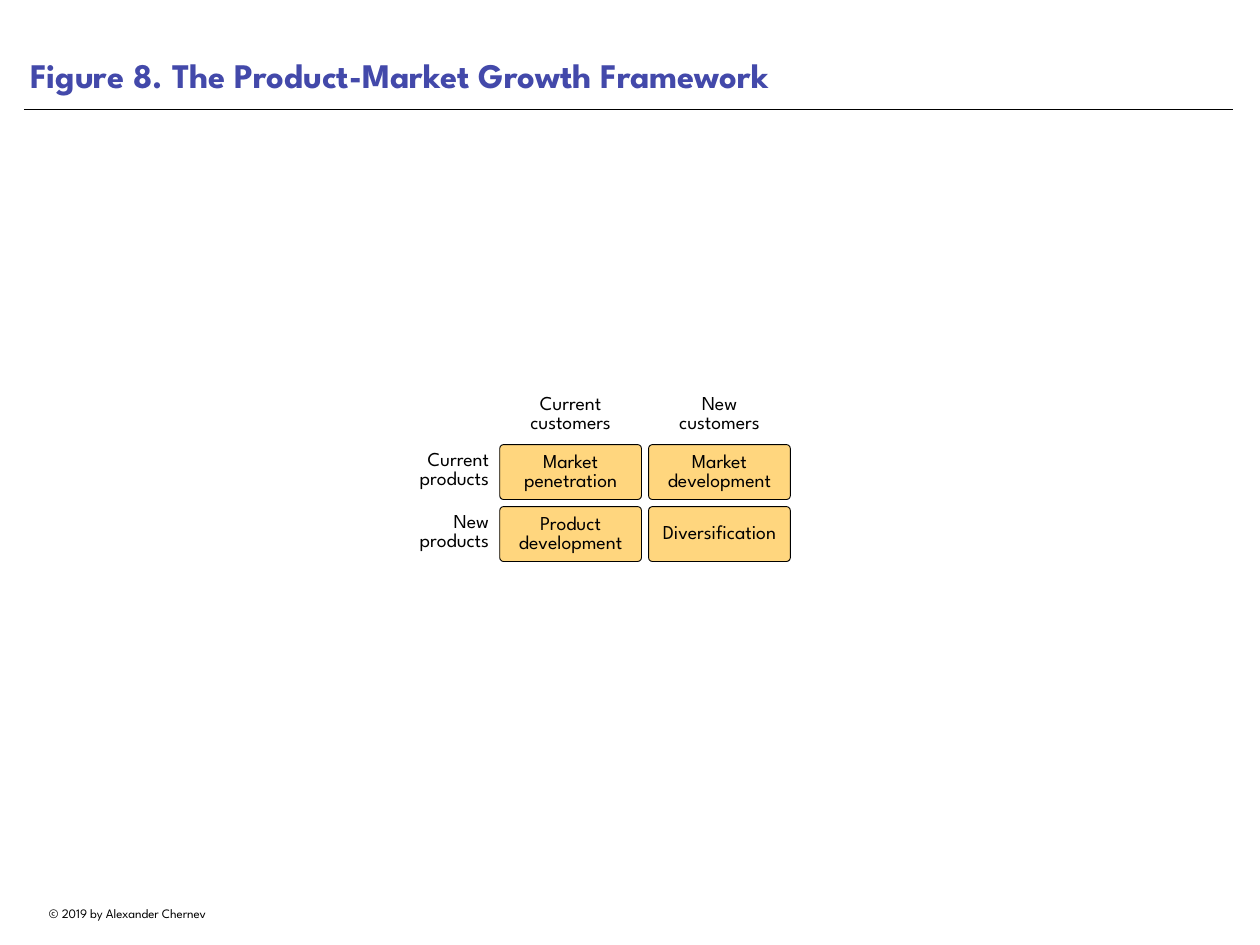
from pptx import Presentation
from pptx.dml.color import RGBColor
from pptx.enum.shapes import MSO_CONNECTOR, MSO_SHAPE
from pptx.enum.text import MSO_ANCHOR as ANCHOR, PP_ALIGN as ALIGN
from pptx.util import Inches, Pt
from lxml.etree import SubElement
from pptx.oxml.ns import qn

FONT = "League Spartan"
BLACK, INDIGO, AMBER = "000000", "4349AA", "FFD67E"
CUSTOMERS = ["Current customers", "New customers"]
PRODUCTS = ["Current products", "New products"]
STRATEGIES = [["Market penetration", "Market development"],
              ["Product development", "Diversification"]]


def rgb(color):
    return RGBColor.from_string(color)


def write(sp, text, size, color=BLACK, bold=False, align=ALIGN.CENTER,
          anchor=ANCHOR.MIDDLE, inset=0.04, spacing=None, wrap=True):
    tf = sp.text_frame
    tf.word_wrap = wrap
    tf.vertical_anchor = anchor
    tf.margin_left = tf.margin_right = Inches(inset)
    tf.margin_top = tf.margin_bottom = Inches(min(inset, 0.07))
    p = tf.paragraphs[0]
    p.alignment = align
    if spacing:
        p.line_spacing = spacing
    r = p.add_run()
    r.text = text
    r.font.name, r.font.size, r.font.bold = FONT, Pt(size), bold
    r.font.color.rgb = rgb(color)


def add_text(s, box, text, size, **style):
    sp = s.shapes.add_textbox(*map(Inches, box))
    write(sp, text, size, **style)


def add_heading(s, left, top, width, height):
    """Place the title above a thin rule that spans the box."""
    add_text(s, (left, top, width, height - 0.09),
             "Figure 8. The Product-Market Growth Framework", 28,
             color=INDIGO, bold=True, align=ALIGN.LEFT,
             anchor=ANCHOR.BOTTOM, inset=0.07)
    y = Inches(top + height)
    rule = s.shapes.add_connector(MSO_CONNECTOR.STRAIGHT, Inches(left), y,
                                  Inches(left + width), y)
    rule.line.color.rgb = rgb(BLACK)
    rule.line.width = Pt(0.5)
    SubElement(rule._element.spPr, qn("a:effectLst"))


def add_strategy(s, box, text):
    sp = s.shapes.add_shape(MSO_SHAPE.ROUNDED_RECTANGLE, *map(Inches, box))
    sp.adjustments[0] = 0.07
    sp.shadow.inherit = False
    sp.fill.solid()
    sp.fill.fore_color.rgb = rgb(AMBER)
    sp.line.color.rgb = rgb(BLACK)
    sp.line.width = Pt(0.75)
    write(sp, text, 16, spacing=0.8)


def add_matrix(s, left, top, width, height):
    """Place the strategy grid, with its labels to the left and above."""
    label_w, label_h, header_w = 1.06, 0.51, 1.42
    cell_w, cell_h, gap = 1.6, 0.62, 0.08
    grid_left = left + width - 2 * cell_w - gap
    grid_top = top + height - 2 * cell_h - gap
    for col, customers in enumerate(CUSTOMERS):
        x = grid_left + col * (cell_w + gap)
        add_text(s, (x + (cell_w - header_w) / 2, top, header_w, label_h),
                 customers, 16, spacing=0.8)
    for row, products in enumerate(PRODUCTS):
        y = grid_top + row * (cell_h + gap)
        add_text(s, (left, y + 0.04, label_w, label_h), products, 16,
                 align=ALIGN.RIGHT, spacing=0.8)
        for col, strategy in enumerate(STRATEGIES[row]):
            x = grid_left + col * (cell_w + gap)
            add_strategy(s, (x, y, cell_w, cell_h), strategy)


def add_footer(s, left, top, width, height):
    add_text(s, (left, top, width, height), "© 2019 by Alexander Chernev",
             10.5, anchor=ANCHOR.TOP, inset=0.1, wrap=False)


def main():
    prs = Presentation()
    prs.slide_width, prs.slide_height = Inches(14.22), Inches(10.67)
    s = prs.slides.add_slide(prs.slide_layouts[6])
    add_heading(s, 0.27, 0, 13.65, 1.24)
    add_matrix(s, 4.5, 4.42, 4.42, 1.92)
    add_footer(s, 0.27, 10.16, 2.34, 0.28)
    prs.save("out.pptx")


if __name__ == "__main__":
    main()
